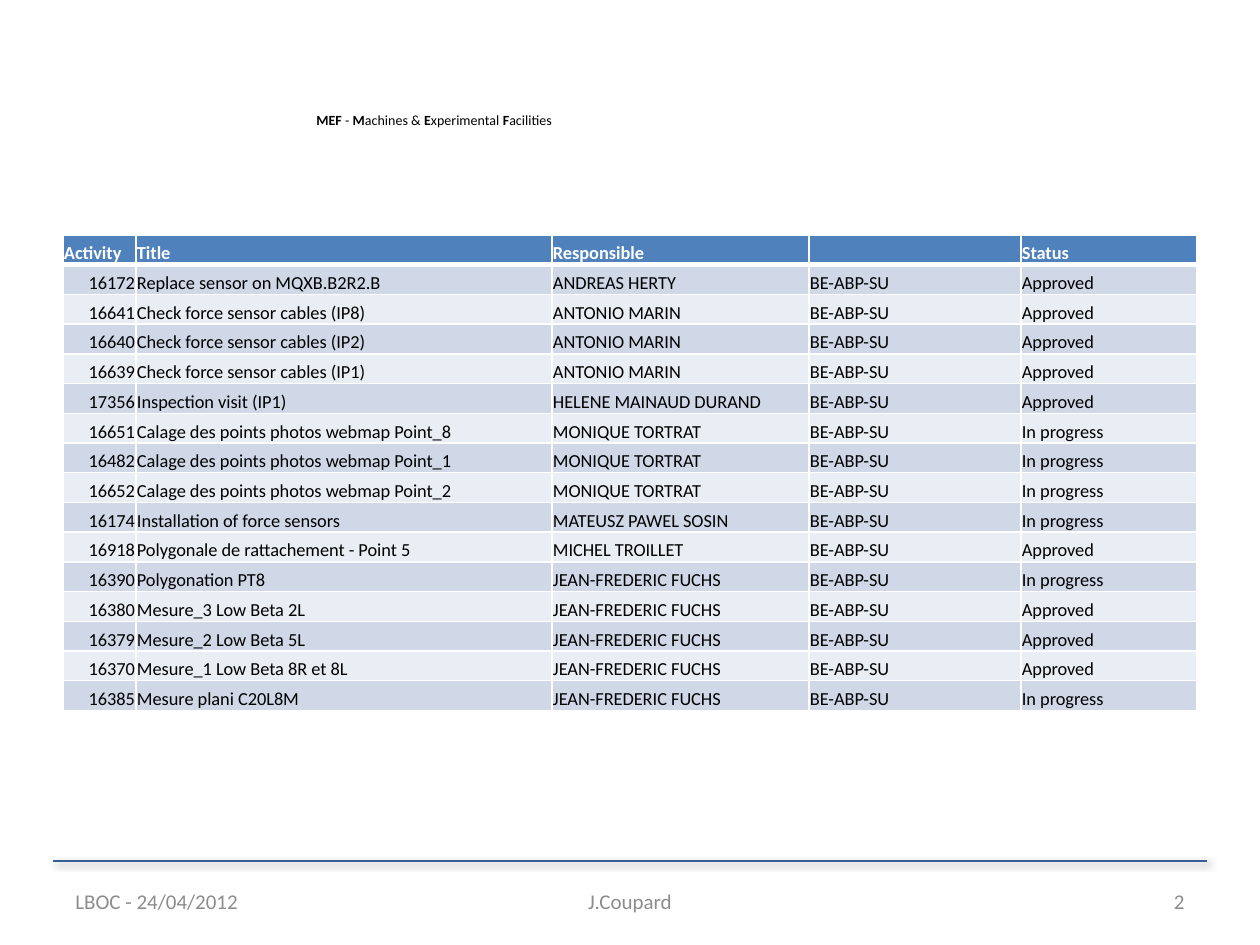
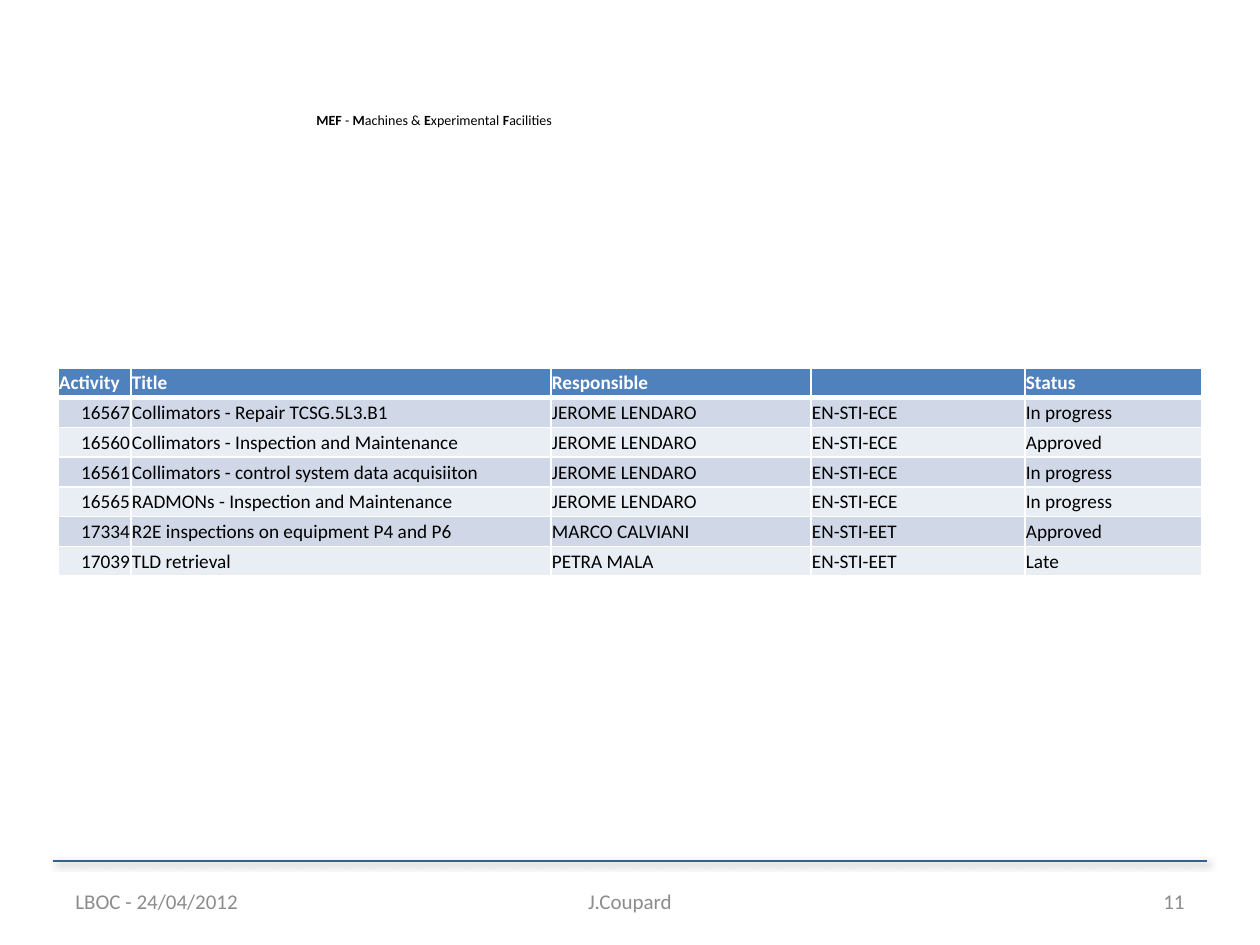
from lxml import etree
from pptx import Presentation
from pptx.dml.color import RGBColor
from pptx.enum import shapes, text
from pptx.oxml import parse_xml
from pptx.oxml.ns import nsdecls, qn
from pptx.util import Emu, Pt

# Content
HEAD = ("Activity", "Title", "Responsible", "", "Status")
OK, RUN, LATE = "Approved", "In progress", "Late"
SU, ECE, EET = "BE-ABP-SU", "EN-STI-ECE", "EN-STI-EET"

SURVEY = [
    ("16172", "Replace sensor on MQXB.B2R2.B", "ANDREAS HERTY", SU, OK),
    ("16641", "Check force sensor cables (IP8)", "ANTONIO MARIN", SU, OK),
    ("16640", "Check force sensor cables (IP2)", "ANTONIO MARIN", SU, OK),
    ("16639", "Check force sensor cables (IP1)", "ANTONIO MARIN", SU, OK),
    ("17356", "Inspection visit (IP1)", "HELENE MAINAUD DURAND", SU, OK),
    ("16651", "Calage des points photos webmap Point_8", "MONIQUE TORTRAT", SU, RUN),
    ("16482", "Calage des points photos webmap Point_1", "MONIQUE TORTRAT", SU, RUN),
    ("16652", "Calage des points photos webmap Point_2", "MONIQUE TORTRAT", SU, RUN),
    ("16174", "Installation of force sensors", "MATEUSZ PAWEL SOSIN", SU, RUN),
    ("16918", "Polygonale de rattachement - Point 5", "MICHEL TROILLET", SU, OK),
    ("16390", "Polygonation PT8", "JEAN-FREDERIC FUCHS", SU, RUN),
    ("16380", "Mesure_3 Low Beta 2L", "JEAN-FREDERIC FUCHS", SU, OK),
    ("16379", "Mesure_2 Low Beta 5L", "JEAN-FREDERIC FUCHS", SU, OK),
    ("16370", "Mesure_1 Low Beta 8R et 8L", "JEAN-FREDERIC FUCHS", SU, OK),
    ("16385", "Mesure plani C20L8M", "JEAN-FREDERIC FUCHS", SU, RUN),
]
SOURCES = [
    ("16567", "Collimators - Repair TCSG.5L3.B1", "JEROME LENDARO", ECE, RUN),
    ("16560", "Collimators - Inspection and Maintenance", "JEROME LENDARO", ECE, OK),
    ("16561", "Collimators - control system data acquisiiton", "JEROME LENDARO", ECE, RUN),
    ("16565", "RADMONs - Inspection and Maintenance", "JEROME LENDARO", ECE, RUN),
    ("17334", "R2E inspections on equipment P4 and P6", "MARCO CALVIANI", EET, OK),
    ("17039", "TLD retrieval", "PETRA MALA", EET, LATE),
]
PAGES = [
    dict(num="2", rows=SURVEY, left=63, top=235, high=476, size=10.5,
         cols=(73, 416, 257, 212, 176), anchor=text.MSO_ANCHOR.BOTTOM),
    dict(num="11", rows=SOURCES, left=58, top=368, high=208, size=11,
         cols=(73, 420, 260, 214, 177), anchor=text.MSO_ANCHOR.MIDDLE),
]
# Pieces of the heading; every other one is bold
GROUP = ("MEF ", "- ", "M", "achines & ", "E", "xperimental ", "F", "acilities")

# Shared look
FONT = "Calibri"
INK = dict(rule="376092", head="4F81BD", odd="D0D8E8", even="E9EDF4",
           white="FFFFFF", black="000000", grey="8C8C8C")
LEFT, MID, RIGHT = text.PP_ALIGN.LEFT, text.PP_ALIGN.CENTER, text.PP_ALIGN.RIGHT


def px(n):
    return Emu(round(n * 914400 / 126))


def write(frame, parts, size=12, ink="black", bold=False, align=LEFT,
          anchor=text.MSO_ANCHOR.TOP):
    """Write one paragraph; a tuple of parts alternates bold and plain."""
    frame.vertical_anchor = anchor
    para = frame.paragraphs[0]
    para.alignment = align
    mixed = isinstance(parts, tuple)
    for i, part in enumerate(parts if mixed else (parts,)):
        if not part:  # keep an empty line from stretching its row
            etree.SubElement(para._p, qn("a:endParaRPr"), sz=str(int(size * 100)))
            continue
        run = para.add_run()
        run.text = part
        run.font.name, run.font.size = FONT, Pt(size)
        run.font.bold = i % 2 == 0 if mixed else bold
        run.font.color.rgb = RGBColor.from_string(INK[ink])


def box(slide, at, parts, wrap=True, **form):
    frame = slide.shapes.add_textbox(*map(px, at)).text_frame
    frame.word_wrap = wrap
    if not wrap:
        frame.auto_size = text.MSO_AUTO_SIZE.SHAPE_TO_FIT_TEXT
    write(frame, parts, **form)


def frame_page(slide, num):
    # Rule with soft shadow
    rule = slide.shapes.add_connector(shapes.MSO_CONNECTOR.STRAIGHT,
                                      px(53), px(861), px(1207), px(861))
    rule.line.color.rgb = RGBColor.from_string(INK["rule"])
    rule.line.width = Pt(1.5)
    rule._element.spPr.append(parse_xml(
        f'<a:effectLst {nsdecls("a")}><a:outerShdw blurRad="{Pt(4)}" dist="{Pt(2)}" '
        f'dir="2700000" rotWithShape="0"><a:srgbClr val="{INK["black"]}">'
        '<a:alpha val="40000"/></a:srgbClr></a:outerShdw></a:effectLst>'))
    # Heading and footers
    box(slide, (304, 105, 263, 30), GROUP, wrap=False, size=8)
    for left, wide, words, align in ((63, 294, "LBOC - 24/04/2012", LEFT),
                                     (430, 400, "J.Coupard", MID),
                                     (903, 294, num, RIGHT)):
        box(slide, (left, 876, wide, 50), words, ink="grey", align=align,
            anchor=text.MSO_ANCHOR.MIDDLE)


def edge(cell, low):
    """White cell borders, the bottom one of the given width."""
    for i, (side, wide) in enumerate((("L", 1), ("R", 1), ("T", 1), ("B", low))):
        cell._tc.get_or_add_tcPr().insert(i, parse_xml(
            f'<a:ln{side} {nsdecls("a")} w="{Pt(wide)}"><a:solidFill>'
            f'<a:srgbClr val="{INK["white"]}"/></a:solidFill></a:ln{side}>'))


def grid(slide, rows, left, top, high, size, cols, anchor):
    lines = [HEAD] + rows
    table = slide.shapes.add_table(len(lines), len(cols), px(left), px(top),
                                   px(sum(cols)), px(high)).table
    table.horz_banding = False
    for col, wide in zip(table.columns, cols):
        col.width = px(wide)
    for r, line in enumerate(lines):
        table.rows[r].height = px(high / len(lines))
        top_row = r == 0
        tint = "head" if top_row else ("even", "odd")[r % 2]
        for c, words in enumerate(line):
            cell = table.cell(r, c)
            cell.margin_left = cell.margin_right = cell.margin_top = px(1)
            cell.margin_bottom = 0
            cell.fill.solid()
            cell.fill.fore_color.rgb = RGBColor.from_string(INK[tint])
            edge(cell, 3 if top_row else 1)
            write(cell.text_frame, words, size=size, bold=top_row,
                  ink="white" if top_row else "black",
                  align=RIGHT if c == 0 and not top_row else LEFT)
            cell.vertical_anchor = anchor


def main():
    deck = Presentation()
    deck.slide_width, deck.slide_height = px(1260), px(945)
    for page in PAGES:
        slide = deck.slides.add_slide(deck.slide_layouts[6])
        frame_page(slide, page["num"])
        grid(slide, **{k: v for k, v in page.items() if k != "num"})
    deck.save("out.pptx")


if __name__ == "__main__":
    main()
